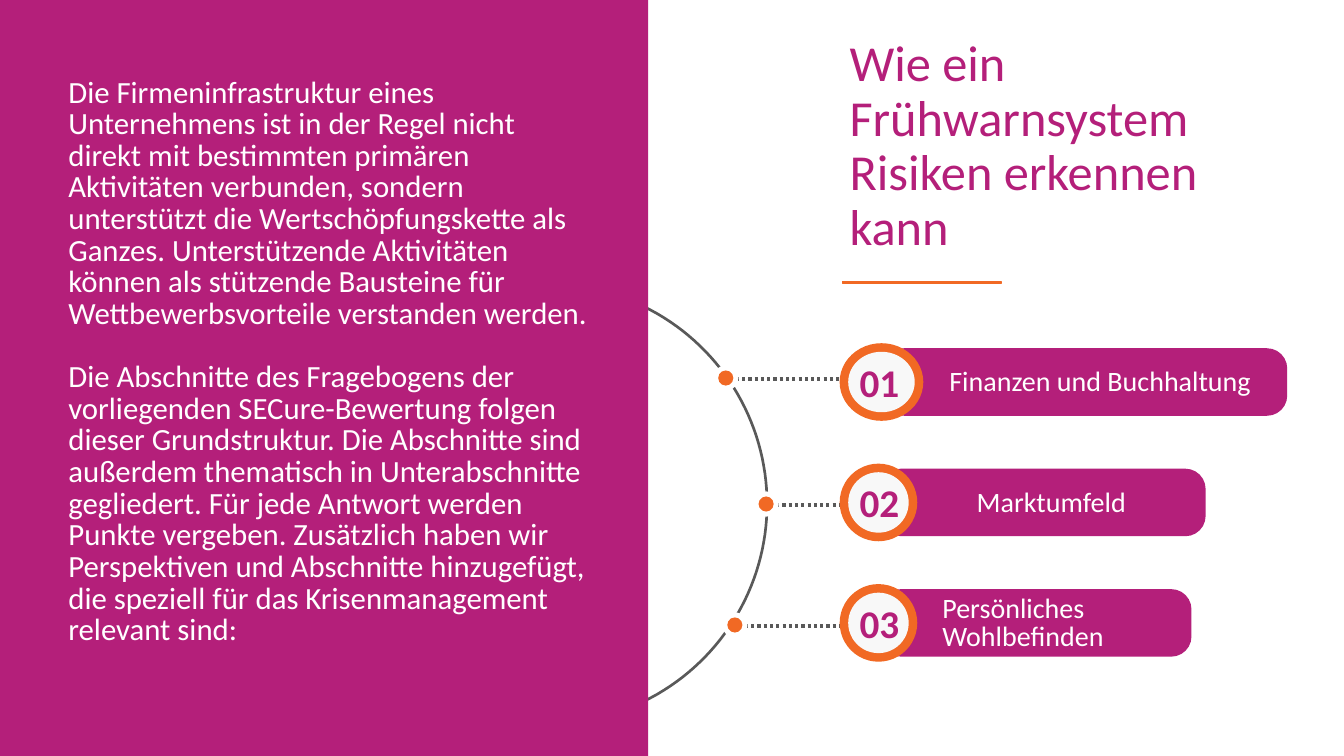
"""Build a slide on how an early warning system can detect risks."""
import math

import pptx
import pptx.dml.color
import pptx.enum.dml
import pptx.enum.shapes
import pptx.enum.text
import pptx.oxml
import pptx.oxml.ns
import pptx.util

RGBColor = pptx.dml.color.RGBColor
Pt = pptx.util.Pt
Shape = pptx.enum.shapes.MSO_SHAPE
Anchor = pptx.enum.text.MSO_ANCHOR

MAGENTA = RGBColor(0xB4, 0x1F, 0x7A)
ORANGE = RGBColor(0xF1, 0x69, 0x24)
GREY = RGBColor(0x59, 0x59, 0x59)
PALE = RGBColor(0xF8, 0xF8, 0xF8)
WHITE = RGBColor(0xFF, 0xFF, 0xFF)

FONT = "Calibri"
COLUMNS, ROWS = 133.33, 75

TITLE = "Wie ein Frühwarnsystem Risiken erkennen kann"
BODY = [
    "Die Firmeninfrastruktur eines Unternehmens ist in der Regel nicht direkt mit "
    "bestimmten primären Aktivitäten verbunden, sondern unterstützt die "
    "Wertschöpfungskette als Ganzes. Unterstützende Aktivitäten können als stützende "
    "Bausteine für Wettbewerbsvorteile verstanden werden.",
    "Die Abschnitte des Fragebogens der vorliegenden SECure-Bewertung folgen dieser "
    "Grundstruktur. Die Abschnitte sind außerdem thematisch in Unterabschnitte "
    "gegliedert. Für jede Antwort werden Punkte vergeben. Zusätzlich haben wir "
    "Perspektiven und Abschnitte hinzugefügt, die speziell für das Krisenmanagement "
    "relevant sind:",
]
TOPICS = [
    {"label": "Finanzen und Buchhaltung", "dot": (72, 37.5), "pill": (87.7, 40),
     "label_left": 93.2, "ring": 8.3},
    {"label": "Marktumfeld", "dot": (76, 50), "pill": (87.4, 32.2),
     "label_left": 95.9, "ring": 7.7},
    {"label": "Persönliches Wohlbefinden", "dot": (72.9, 62), "pill": (87.4, 30.8),
     "label_left": 92.5, "ring": 7.7},
]
FIRST_ROW, ROW_STEP = 37.9, 11.95
RING_LEFT, RING_HEIGHT, RING_EDGE = 83.3, 7.7, 0.85
PILL_HEIGHT, LABEL_HEIGHT, NUMBER_HEIGHT = 6.7, 3.9, 5.7
ARC_CENTRE, ARC_RADIUS, ARC_STEPS = (54.3, 50), 21.8, 90

deck = pptx.Presentation()
deck.slide_width = pptx.util.Inches(13.33)
deck.slide_height = pptx.util.Inches(7.5)
page = deck.slides.add_slide(deck.slide_layouts[6])


def across(columns):
    return round(deck.slide_width * columns / COLUMNS)


def down(rows):
    return round(deck.slide_height * rows / ROWS)


def place(left, top, width, height):
    return across(left), down(top), across(width), down(height)


def add_block(shapes, kind, bounds, color):
    block = shapes.add_shape(kind, *place(*bounds))
    block.shadow.inherit = False
    block.fill.solid()
    block.fill.fore_color.rgb = color
    block.line.fill.background()
    return block


def add_text(shapes, bounds, texts, size, color, spacing=None, gap=0, bold=False,
             anchor=Anchor.TOP):
    box = shapes.add_textbox(*place(*bounds))
    frame = box.text_frame
    frame.word_wrap = True
    frame.vertical_anchor = anchor
    frame.text = "\n".join(texts)
    for index, para in enumerate(frame.paragraphs):
        para.line_spacing = spacing
        para.space_before = Pt(gap if index else 0)
        for span in para.runs:
            span.font.name = FONT
            span.font.size = Pt(size)
            span.font.bold = bold
            span.font.color.rgb = color


def add_arc():
    points = []
    for step in range(ARC_STEPS + 1):
        angle = math.pi * (step / ARC_STEPS - 0.5)
        points.append((across(ARC_CENTRE[0] + ARC_RADIUS * math.cos(angle)),
                       down(ARC_CENTRE[1] + ARC_RADIUS * math.sin(angle))))
    builder = page.shapes.build_freeform(*points[0])
    builder.add_line_segments(points[1:], close=False)
    arc = builder.convert_to_shape()
    arc.shadow.inherit = False
    arc.fill.background()
    arc.line.color.rgb = GREY
    arc.line.width = Pt(1.91)


def add_leader(dot):
    x, y = dot
    leader = page.shapes.add_connector(
        pptx.enum.shapes.MSO_CONNECTOR.STRAIGHT,
        across(x + 1), down(y + 0.1), across(90), down(y + 0.1))
    leader.line.color.rgb = GREY
    leader.line.width = Pt(2.25)
    leader.line.dash_style = pptx.enum.dml.MSO_LINE.ROUND_DOT
    properties = leader._element.find(pptx.oxml.ns.qn("p:spPr"))
    properties.append(pptx.oxml.parse_xml(
        f"<a:effectLst {pptx.oxml.ns.nsdecls('a')}/>"))
    shapes = page.shapes.add_group_shape().shapes
    for size, color in ((2.5, WHITE), (1.5, ORANGE)):
        add_block(shapes, Shape.OVAL, (x - size / 2, y - size / 2, size, size), color)


def add_topic(index, topic):
    centre = FIRST_ROW + index * ROW_STEP
    pill_left, pill_width = topic["pill"]
    ring = topic["ring"]
    shapes = page.shapes.add_group_shape().shapes
    pill = add_block(shapes, Shape.ROUNDED_RECTANGLE,
                     (pill_left, centre - PILL_HEIGHT / 2, pill_width, PILL_HEIGHT),
                     MAGENTA)
    pill.adjustments[0] = 0.3
    add_text(shapes,
             (topic["label_left"], centre + 0.1 - LABEL_HEIGHT / 2, pill_width, LABEL_HEIGHT),
             [topic["label"]], 20, WHITE, spacing=Pt(20.4), anchor=Anchor.MIDDLE)
    for inset, color in ((0, ORANGE), (RING_EDGE, PALE)):
        add_block(shapes, Shape.OVAL,
                  (RING_LEFT + inset, centre - RING_HEIGHT / 2 + inset,
                   ring - 2 * inset, RING_HEIGHT - 2 * inset), color)
    add_text(shapes, (RING_LEFT + 1, centre - NUMBER_HEIGHT / 2, ring - 1.65, NUMBER_HEIGHT),
             [f"{index + 1:02}"], 28, MAGENTA, bold=True)


add_arc()
add_block(page.shapes, Shape.RECTANGLE, (0, 0, 64.3, ROWS), MAGENTA)
add_text(page.shapes, (5.8, 7.2, 53.7, 67.8), BODY, 22, WHITE, spacing=Pt(22.6), gap=22.6)
for index, topic in enumerate(TOPICS):
    add_leader(topic["dot"])
    add_topic(index, topic)
add_text(page.shapes, (83.3, 3.3, 37.9, 26.9), [TITLE], 36, MAGENTA, spacing=0.9)
rule = add_block(page.shapes, Shape.RECTANGLE, (83.6, 27.9, 15.7, 0.2), ORANGE)
rule.line.color.rgb = ORANGE
rule.line.width = Pt(1)

deck.save("out.pptx")
